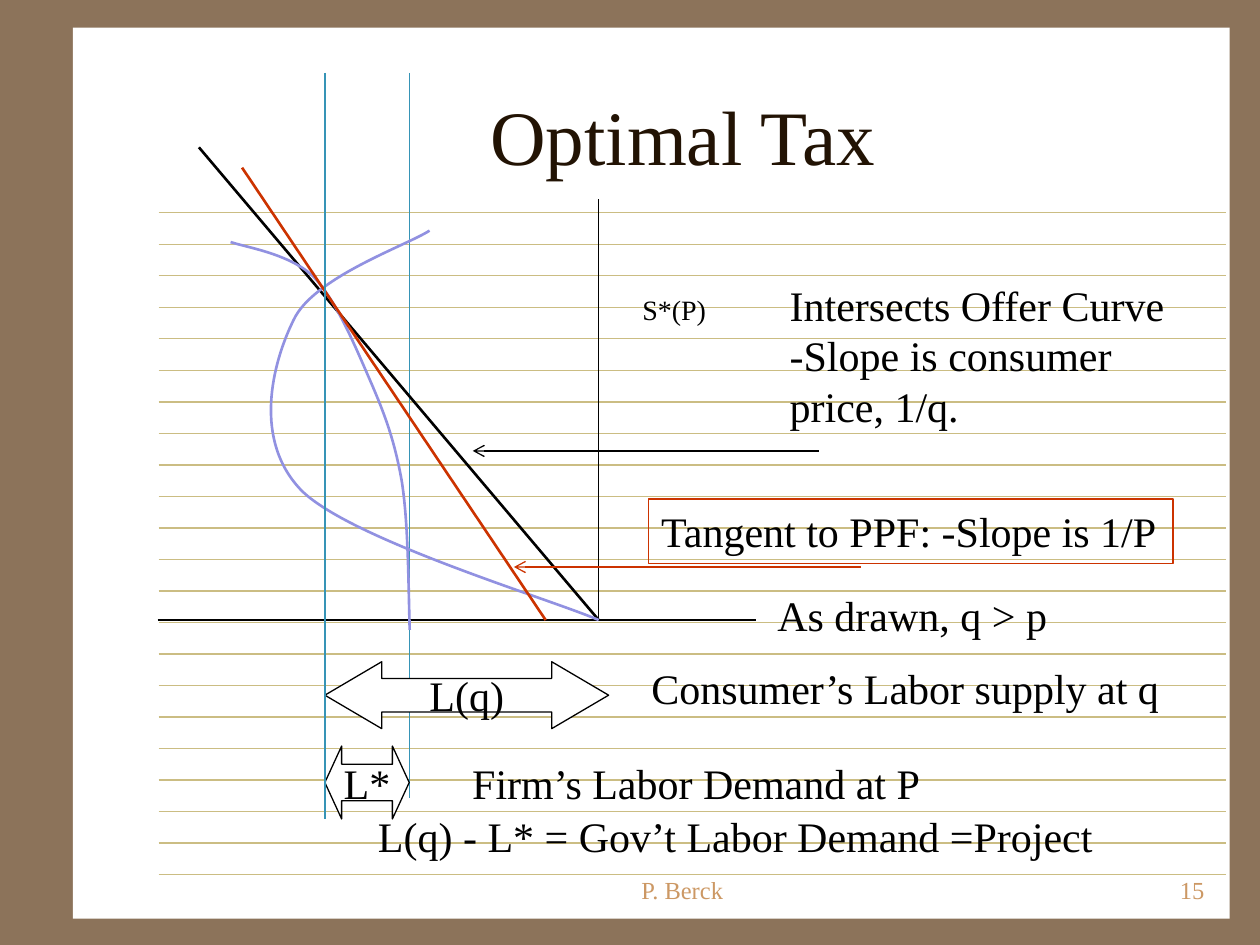
from dataclasses import dataclass

from lxml import etree
from pptx import Presentation
from pptx import util as u
from pptx.dml.color import RGBColor
from pptx.enum import shapes, text
from pptx.oxml.ns import qn


@dataclass(frozen=True)
class Theme:
    """Colours, font and type sizes of the slide."""
    font: str = "Times New Roman"
    frame: str = "8C735A"
    sheet: str = "FFFFFF"
    rule: str = "CBBD83"
    title: str = "221304"
    ink: str = "000000"
    footer: str = "CC9864"
    guide: str = "3694B6"
    curve: str = "9191E1"
    tangent: str = "CC3300"
    title_size: int = 44
    body_size: int = 24
    label_size: int = 16
    footer_size: int = 14
    thin: float = 0.75
    thick: float = 1.5


T = Theme()
LEFT, MIDDLE, RIGHT = text.PP_ALIGN.LEFT, text.PP_ALIGN.CENTER, text.PP_ALIGN.RIGHT
TOP, CENTRE, BOTTOM = text.MSO_ANCHOR.TOP, text.MSO_ANCHOR.MIDDLE, text.MSO_ANCHOR.BOTTOM
ORIGIN_X, ORIGIN_Y = 12.07, 12.5
FIRM_X, CONSUMER_X = 6.55, 8.26
RULES, FIRST_RULE, LAST_RULE = 22, 4.29, 17.63
OFFER_CURVE = [
    (ORIGIN_X, ORIGIN_Y),
    (11.07, 12.07), (7.14, 10.9), (6.1, 9.91),
    (5.08, 8.89), (5.49, 7.32), (5.92, 6.45),
    (6.32, 5.59), (8.2, 4.95), (8.66, 4.65),
]
PPF = [
    (CONSUMER_X, 12.7),
    (8.23, 11.63), (8.23, 10.54), (8.1, 9.7),
    (7.95, 8.86), (7.75, 8.33), (7.44, 7.62),
    (7.14, 6.93), (6.76, 6.02), (6.3, 5.56),
    (5.82, 5.11), (4.93, 4.98), (4.65, 4.88),
]


def rgb(value):
    """Return a colour from its hex string."""
    return RGBColor.from_string(value)


def box(values):
    """Return left, top, width and height as lengths."""
    return [u.Cm(v) for v in values]


def stroke(sp, color, width):
    """Give a shape or connector a solid line."""
    sp.line.color.rgb = rgb(color)
    sp.line.width = u.Pt(width)


def write(sp, words, size=T.body_size, color=T.ink, align=LEFT, anchor=TOP, wrap=False):
    """Set and format the text of a shape."""
    tf = sp.text_frame
    tf.text = words
    tf.word_wrap = wrap
    tf.vertical_anchor = anchor
    for p in tf.paragraphs:
        p.alignment = align
        for r in p.runs:
            r.font.name = T.font
            r.font.size = u.Pt(size)
            r.font.color.rgb = rgb(color)


def add_line(s, start, end, color=T.ink, width=T.thin, arrow=False):
    """Draw a straight line, with an open arrowhead at its start on request."""
    ends = box(start + end)
    sp = s.shapes.add_connector(shapes.MSO_CONNECTOR.STRAIGHT, *ends)
    stroke(sp, color, width)
    props = sp._element.spPr
    if arrow:
        etree.SubElement(props.find(qn("a:ln")), qn("a:headEnd"), type="arrow")
    etree.SubElement(props, qn("a:effectLst"))


def add_shape(s, kind, at, fill=None, line=None):
    """Add a preset shape with optional fill and line."""
    sp = s.shapes.add_shape(kind, *box(at))
    sp.shadow.inherit = False
    if fill:
        sp.fill.solid()
        sp.fill.fore_color.rgb = rgb(fill)
    else:
        sp.fill.background()
    if line:
        stroke(sp, line, T.thin)
    else:
        sp.line.fill.background()
    return sp


def add_text(s, words, at, **style):
    """Add a text box."""
    write(s.shapes.add_textbox(*box(at)), words, **style)


def add_curve(s, points):
    """Draw a chain of Bezier segments through a start and control triples."""
    (x, y), *rest = [(u.Cm(px), u.Cm(py)) for px, py in points]
    builder = s.shapes.build_freeform(x, y)
    builder.add_line_segments(rest, close=False)
    sp = builder.convert_to_shape()
    sp.shadow.inherit = False
    sp.fill.background()
    stroke(sp, T.curve, T.thick)
    steps = list(sp._element.iter(qn("a:lnTo")))
    for first, second, third in zip(steps[::3], steps[1::3], steps[2::3]):
        bezier = etree.Element(qn("a:cubicBezTo"))
        first.addprevious(bezier)
        for step in (first, second, third):
            bezier.append(step[0])
            step.getparent().remove(step)


def add_span(s, words, at, head):
    """Add a labelled double arrow with the given head length ratio."""
    sp = add_shape(s, shapes.MSO_SHAPE.LEFT_RIGHT_ARROW, at, T.sheet, T.ink)
    sp.adjustments[0] = 0.5
    sp.adjustments[1] = head
    write(sp, words, align=MIDDLE, anchor=CENTRE)


def add_paper(s):
    """Draw the framed, ruled sheet and its footer."""
    s.background.fill.solid()
    s.background.fill.fore_color.rgb = rgb(T.frame)
    add_shape(s, shapes.MSO_SHAPE.RECTANGLE, (1.47, 0.56, 23.32, 17.96), T.sheet)
    gap = (LAST_RULE - FIRST_RULE) / (RULES - 1)
    for i in range(RULES):
        y = FIRST_RULE + i * gap
        add_line(s, (3.2, y), (24.71, y), T.rule)
    footer = dict(size=T.footer_size, color=T.footer, anchor=BOTTOM, wrap=True)
    add_text(s, "P. Berck", (9.73, 17.09, 8.05, 1.27), align=MIDDLE, **footer)
    add_text(s, "15", (19.25, 17.09, 5.28, 1.27), align=RIGHT, **footer)


def add_title(s, words):
    """Format the title placeholder and bring it above the sheet."""
    sp = s.shapes.title
    sp.left, sp.top, sp.width, sp.height = box((2.97, 1.12, 21.59, 3.18))
    write(sp, words, T.title_size, T.title, MIDDLE, CENTRE, True)
    s.shapes._spTree.append(sp._element)


def add_diagram(s):
    """Draw the axes, budget lines, curves and labour spans."""
    add_line(s, (CONSUMER_X, 1.47), (CONSUMER_X, 16.08), T.guide)
    add_line(s, (ORIGIN_X, ORIGIN_Y), (4.01, 2.97), width=T.thick)
    add_line(s, (ORIGIN_X, ORIGIN_Y), (ORIGIN_X, 4.01))
    add_line(s, (3.18, ORIGIN_Y), (15.24, ORIGIN_Y))
    add_curve(s, OFFER_CURVE)
    add_curve(s, PPF)
    add_line(s, (11, ORIGIN_Y), (4.88, 3.38), T.tangent, T.thick)
    add_line(s, (9.53, 9.09), (16.51, 9.09), arrow=True)
    add_span(s, "L(q)", (FIRM_X, 13.34, 5.72, 1.35), 0.85)
    add_span(s, "L*", (FIRM_X, 15.04, 1.7, 1.47), 0.23)
    add_line(s, (FIRM_X, 1.47), (FIRM_X, 16.51), T.guide)
    add_line(s, (10.36, 11.43), (17.35, 11.43), T.tangent, arrow=True)


def add_notes_on_diagram(s):
    """Add the explanations beside the diagram."""
    add_text(s, "S*(P)", (12.7, 5.77, 1.8, 0.94), size=T.label_size)
    add_text(s, "Intersects Offer Curve\n-Slope is consumer\nprice, 1/q.", (15.67, 5.51, 8.08, 3.3))
    frame = add_shape(s, shapes.MSO_SHAPE.RECTANGLE, (13.08, 10.06, 10.57, 1.3), line=T.tangent)
    write(frame, "Tangent to PPF: -Slope is 1/P")
    add_text(s, "As drawn, q > p", (15.42, 11.76, 5.94, 1.27))
    add_text(s, "Consumer’s Labor supply at q", (12.88, 13.23, 10.77, 1.27))
    add_text(s, "Firm’s Labor Demand at P", (9.27, 15.14, 9.58, 1.27))
    add_text(s, "L(q) - L* = Gov’t Labor Demand =Project", (7.37, 16.21, 14.94, 1.27))


def main():
    """Build and save the slide."""
    prs = Presentation()
    prs.slide_width, prs.slide_height = u.Cm(25.4), u.Cm(19.05)
    s = prs.slides.add_slide(prs.slide_layouts[5])
    add_paper(s)
    add_title(s, "Optimal Tax")
    add_diagram(s)
    add_notes_on_diagram(s)
    prs.save("out.pptx")


if __name__ == "__main__":
    main()
